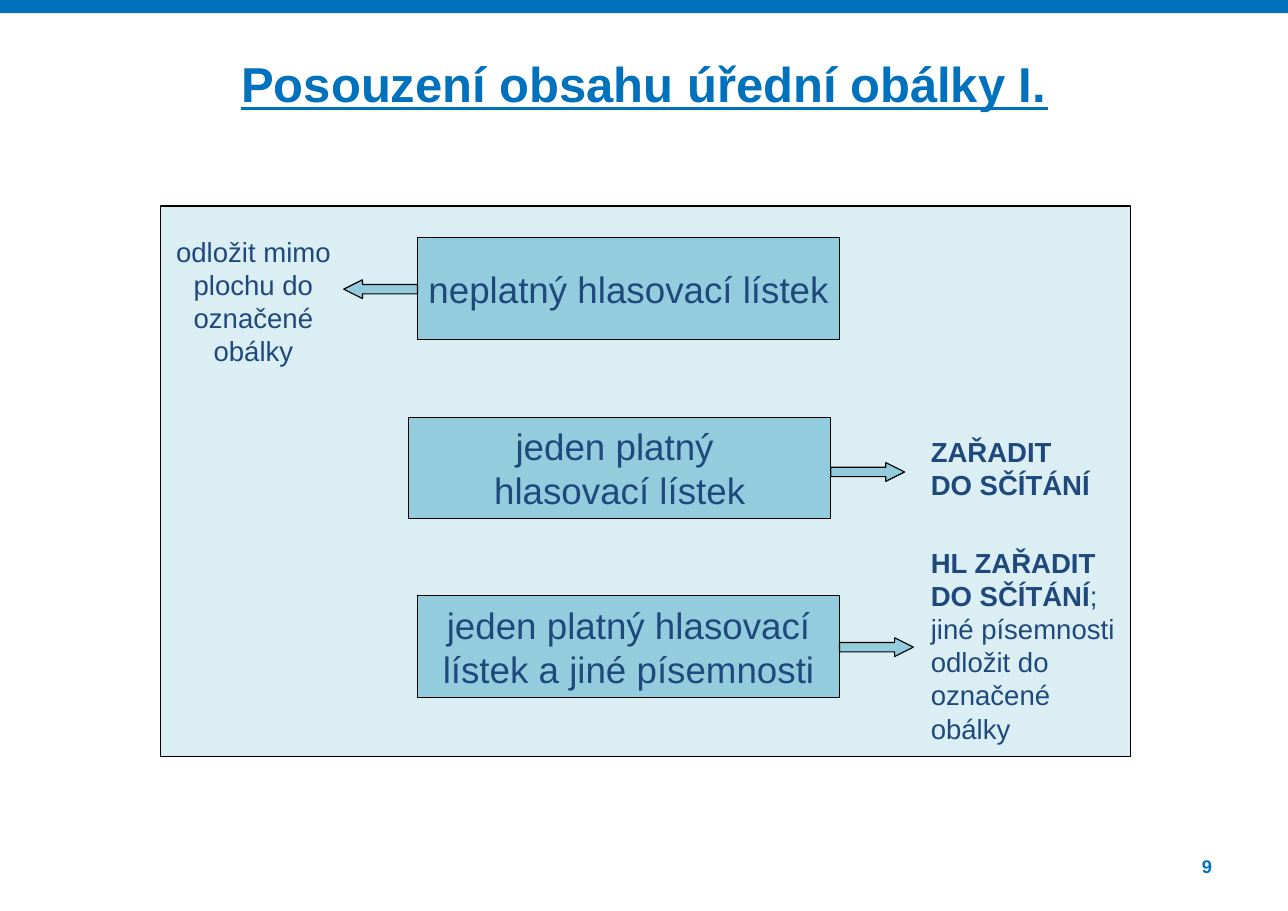
import pptx
import pptx.util
import pptx.dml.color
import pptx.enum.shapes
import pptx.enum.text
import pptx.oxml

Inches = pptx.util.Inches
SHAPES = pptx.enum.shapes.MSO_SHAPE
ALIGN = pptx.enum.text.PP_ALIGN
ANCHOR = pptx.enum.text.MSO_ANCHOR
AUTO_SIZE = pptx.enum.text.MSO_AUTO_SIZE

BLUE, NAVY, BOX_FILL, PANEL_FILL = "0071BC", "1F497D", "93CDDD", "B7DEE8"
BOX_WIDTH, BOX_HEIGHT = 3.83, 0.92
ARROW_WIDTH, ARROW_HEIGHT = 0.67, 0.17


def set_color(color_format, value):
    """Apply a hex colour to a colour format."""
    color_format.rgb = pptx.dml.color.RGBColor.from_string(value)


def add_filled_shape(slide, kind, left, top, width, height, fill, outlined=True):
    """Add a flat preset shape, with a thin black outline if wanted."""
    shape = slide.shapes.add_shape(
        kind, Inches(left), Inches(top), Inches(width), Inches(height))
    shape.shadow.inherit = False
    shape.fill.solid()
    set_color(shape.fill.fore_color, fill)
    if outlined:
        shape.line.width = pptx.util.Pt(0.75)
        set_color(shape.line.color, "000000")
    else:
        shape.line.fill.background()
    return shape


def set_opacity(shape, percent):
    """Make the solid fill of a shape partly transparent."""
    color = shape.fill._xPr.find(".//" + pptx.oxml.ns.qn("a:srgbClr"))
    alpha = pptx.oxml.parse_xml(
        f'<a:alpha {pptx.oxml.ns.nsdecls("a")} val="{percent * 1000}"/>')
    color.append(alpha)


def write_runs(paragraph, runs, size, color, alignment):
    """Write (text, bold) runs, turning newlines into line breaks."""
    paragraph.alignment = alignment
    for text, bold in runs:
        for index, line in enumerate(text.split("\n")):
            if index:
                paragraph.add_line_break()
            run = paragraph.add_run()
            run.text = line
            run.font.name = "Arial"
            run.font.size = pptx.util.Pt(size)
            run.font.bold = bold
            set_color(run.font.color, color)


def add_text(slide, left, top, width, height, runs, size, color, alignment):
    """Add a wrapping text box and return it."""
    box = slide.shapes.add_textbox(
        Inches(left), Inches(top), Inches(width), Inches(height))
    box.text_frame.word_wrap = True
    write_runs(box.text_frame.paragraphs[0], runs, size, color, alignment)
    return box


def add_heading(slide, left, top, width, height, text, size, alignment):
    """Add bold blue text in a box without margins."""
    box = add_text(slide, left, top, width, height,
                   [(text, True)], size, BLUE, alignment)
    frame = box.text_frame
    frame.margin_left = frame.margin_right = 0
    frame.margin_top = frame.margin_bottom = 0
    return box


def add_label(slide, left, top, width, height, runs, alignment=ALIGN.LEFT):
    """Add an outcome label that grows with its text."""
    box = add_text(slide, left, top, width, height, runs, 18, NAVY, alignment)
    box.text_frame.auto_size = AUTO_SIZE.SHAPE_TO_FIT_TEXT


def add_case(slide, left, top, text, wrap=True):
    """Add a box naming one possible content of the envelope."""
    shape = add_filled_shape(slide, SHAPES.RECTANGLE, left, top,
                             BOX_WIDTH, BOX_HEIGHT, BOX_FILL)
    frame = shape.text_frame
    frame.word_wrap = wrap
    frame.vertical_anchor = ANCHOR.MIDDLE
    write_runs(frame.paragraphs[0], [(text, False)], 24, NAVY, ALIGN.CENTER)


def add_arrow(slide, kind, left, top):
    """Add a slim block arrow."""
    arrow = add_filled_shape(slide, kind, left, top,
                             ARROW_WIDTH, ARROW_HEIGHT, BOX_FILL)
    arrow.adjustments[0] = 0.5
    arrow.adjustments[1] = 1


def main():
    """Build the slide and save it."""
    presentation = pptx.Presentation()
    presentation.slide_width = Inches(11.69)
    presentation.slide_height = Inches(8.27)
    slide = presentation.slides.add_slide(presentation.slide_layouts[6])

    add_filled_shape(slide, SHAPES.RECTANGLE, 0, 0, 11.69, 0.12, BLUE, outlined=False)
    add_heading(slide, 10.22, 7.76, 0.78, 0.21, "9", 12, ALIGN.RIGHT)
    title = add_heading(slide, 0.81, 0.49, 10.08, 1.06,
                        "Posouzení obsahu úřední obálky I.", 32, ALIGN.CENTER)
    title.text_frame.paragraphs[0].runs[0].font.underline = True

    panel = add_filled_shape(slide, SHAPES.RECTANGLE, 1.46, 1.87, 8.8, 5, PANEL_FILL)
    set_opacity(panel, 50)

    add_case(slide, 3.79, 2.16, "neplatný hlasovací lístek", wrap=False)
    add_case(slide, 3.71, 3.79, "jeden platný \nhlasovací lístek")
    add_case(slide, 3.79, 5.41, "jeden platný hlasovací lístek a jiné písemnosti")

    add_arrow(slide, SHAPES.LEFT_ARROW, 3.79 - ARROW_WIDTH, 2.54)
    add_arrow(slide, SHAPES.RIGHT_ARROW, 3.71 + BOX_WIDTH, 4.2)
    add_arrow(slide, SHAPES.RIGHT_ARROW, 3.79 + BOX_WIDTH, 5.79)

    add_label(slide, 1.46, 2.08, 1.68, 1.31,
              [("odložit mimo plochu do označené obálky", False)], ALIGN.CENTER)
    add_label(slide, 8.35, 3.9, 1.83, 0.71, [("ZAŘADIT\nDO SČÍTÁNÍ", True)])
    add_label(slide, 8.35, 4.91, 2.07, 1.92,
              [("HL ZAŘADIT DO SČÍTÁNÍ", True),
               ("; jiné písemnosti odložit do označené obálky", False)])

    presentation.save("out.pptx")


if __name__ == "__main__":
    main()
